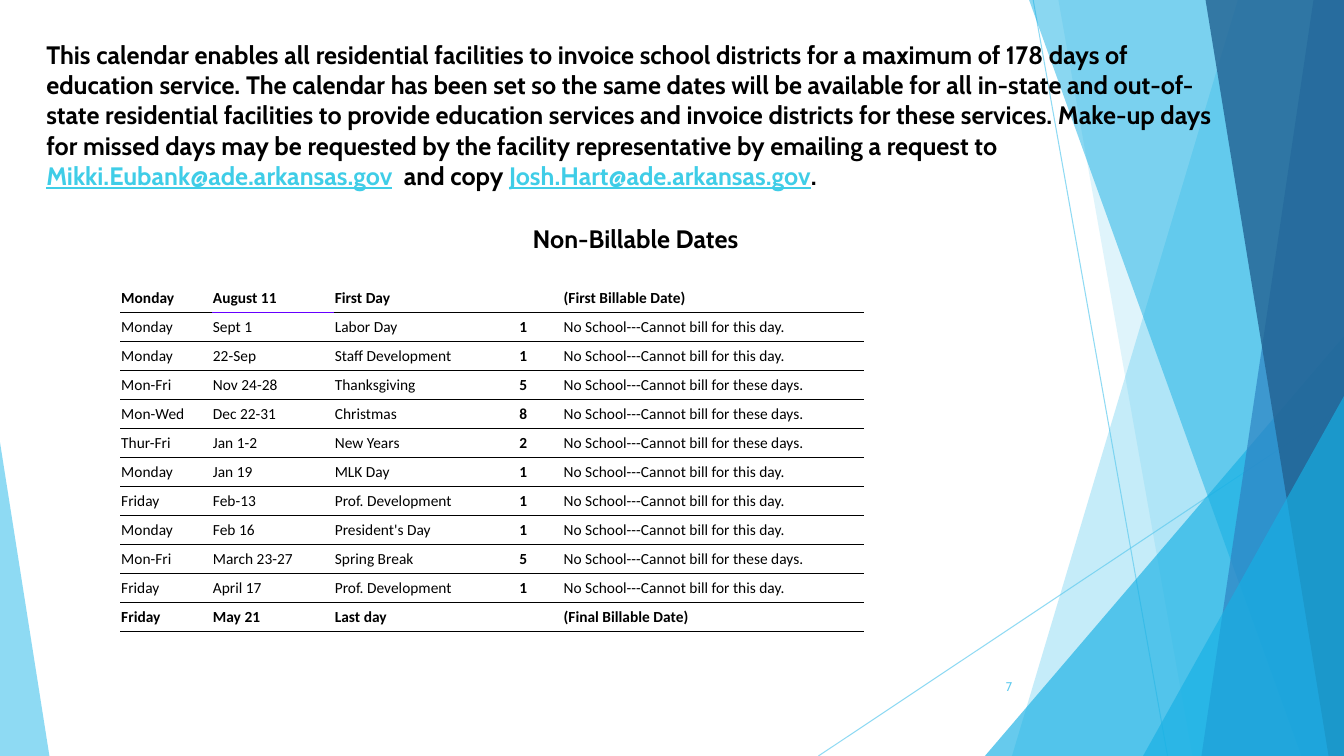
"""Build the slide listing the dates on which facilities cannot bill districts."""
from dataclasses import dataclass

from lxml.etree import SubElement
from pptx import Presentation
from pptx.dml.color import RGBColor
from pptx.dml.fill import FillFormat
from pptx.enum.shapes import MSO_CONNECTOR, MSO_SHAPE
from pptx.enum.text import MSO_ANCHOR, MSO_AUTO_SIZE, PP_ALIGN
from pptx.oxml import parse_xml
from pptx.oxml.ns import nsdecls, qn
from pptx.shapes.autoshape import Shape
from pptx.slide import Slide
from pptx.table import _Cell
from pptx.text.text import TextFrame, _Paragraph
from pptx.util import Pt

WIDTH, HEIGHT = 960, 540
BLACK, WHITE, SKY, CYAN = "000000", "FFFFFF", "5FCBEF", "17B0E4"
LINK, PURPLE = "3FCDE7", "6600FF"
NO_STYLE = "{2D5ABB26-0587-4C30-8999-92F81FD0307C}"


@dataclass(frozen=True)
class Ray:
    start: tuple[float, float]
    end: tuple[float, float]


@dataclass(frozen=True)
class Band:
    top_x: float
    bottom_x: float
    color: str
    opacity: int


@dataclass(frozen=True)
class Wedge:
    left: float
    top: float
    width: float
    peak: float
    color: str
    opacity: int


@dataclass(frozen=True)
class Entry:
    day: str
    date: str
    event: str
    count: str
    note: str
    billable: bool = False


RAYS = [Ray((738, 0), (834, HEIGHT)), Ray((WIDTH, 290), (584.6, HEIGHT))]
FACETS = [
    Band(884.2, 722.9, SKY, 36),
    Band(756, 851.8, SKY, 20),
    Wedge(703.5, 240, 256.5, 1, CYAN, 66),
    Band(735.1, 929.5, CYAN, 50),
    Band(938.2, 858.2, "2E83C3", 70),
    Band(861.1, 949, "226292", 80),
    Wedge(816.5, 283, 143.5, 1, CYAN, 66),
    Wedge(0, 316, 35.3, 0, SKY, 70),
]
NOTICE = [
    ("This calendar enables all residential facilities to invoice school districts for a "
     "maximum of 178 days of education service. The calendar has been set so the same dates "
     "will be available for all in-state and out-of-state residential facilities to provide "
     "education services and invoice districts for these services. Make-up days for missed "
     "days may be requested by the facility representative by emailing a request to ", False),
    ("Mikki.Eubank@ade.arkansas.gov", True),
    ("  and copy ", False),
    ("Josh.Hart@ade.arkansas.gov", True),
    (".", False),
]
ONE_DAY = "No School---Cannot bill for this day."
MORE_DAYS = "No School---Cannot bill for these days."
ENTRIES = [
    Entry("Monday", "August 11", "First Day", "", "(First Billable Date)", True),
    Entry("Monday", "Sept 1", "Labor Day", "1", ONE_DAY),
    Entry("Monday", "22-Sep", "Staff Development", "1", ONE_DAY),
    Entry("Mon-Fri", "Nov 24-28", "Thanksgiving", "5", MORE_DAYS),
    Entry("Mon-Wed", "Dec 22-31", "Christmas", "8", MORE_DAYS),
    Entry("Thur-Fri", "Jan 1-2", "New Years", "2", MORE_DAYS),
    Entry("Monday", "Jan 19", "MLK Day", "1", ONE_DAY),
    Entry("Friday", "Feb-13", "Prof. Development", "1", ONE_DAY),
    Entry("Monday", "Feb 16", "President's Day", "1", ONE_DAY),
    Entry("Mon-Fri", "March 23-27", "Spring Break", "5", MORE_DAYS),
    Entry("Friday", "April 17", "Prof. Development", "1", ONE_DAY),
    Entry("Friday", "May 21", "Last day", "", "(Final Billable Date)", True),
]
COLUMN_WIDTHS = [65.5, 87.1, 107.3, 56.2, 215.3, 113]
COUNT_COLUMN = 3
ROW_HEIGHT = 20.7


def paint(fill: FillFormat, color: str, opacity: int = 100) -> None:
    fill.solid()
    fill.fore_color.rgb = RGBColor.from_string(color)
    if opacity < 100:
        tint = fill._xPr.find(".//" + qn("a:srgbClr"))
        SubElement(tint, qn("a:alpha"), val=str(opacity * 1000))


def style(para: _Paragraph, size: float, color: str = BLACK, bold: bool = False,
          name: str = "Cabin", align: PP_ALIGN = PP_ALIGN.LEFT) -> None:
    para.alignment = align
    para.font.size, para.font.bold, para.font.name = Pt(size), bold, name
    paint(para.font.fill, color)


def place(box: Shape, left: float, top: float, width: float, height: float) -> TextFrame:
    box.left, box.top, box.width, box.height = Pt(left), Pt(top), Pt(width), Pt(height)
    frame = box.text_frame
    frame.word_wrap, frame.auto_size = True, MSO_AUTO_SIZE.NONE
    frame.vertical_anchor = MSO_ANCHOR.TOP
    return frame


def add_text_frame(page: Slide, *bounds: float) -> TextFrame:
    return place(page.shapes.add_textbox(0, 0, 0, 0), *bounds)


def draw_ray(page: Slide, ray: Ray) -> None:
    ends = [Pt(value) for value in ray.start + ray.end]
    line = page.shapes.add_connector(MSO_CONNECTOR.STRAIGHT, *ends)
    line.line.width = Pt(0.75)
    paint(line.line.fill, SKY, 70)
    SubElement(line._element.spPr, qn("a:effectLst"))


def draw_facet(page: Slide, facet: Band | Wedge) -> None:
    if isinstance(facet, Band):
        builder = page.shapes.build_freeform(Pt(facet.top_x), 0, scale=1.0)
        corners = [(WIDTH, 0), (WIDTH, HEIGHT), (facet.bottom_x, HEIGHT)]
        builder.add_line_segments([(Pt(x), Pt(y)) for x, y in corners], close=True)
        shape = builder.convert_to_shape()
    else:
        shape = page.shapes.add_shape(
            MSO_SHAPE.ISOSCELES_TRIANGLE, Pt(facet.left), Pt(facet.top),
            Pt(facet.width), Pt(HEIGHT - facet.top))
        shape.adjustments[0] = facet.peak
    shape.shadow.inherit = False
    shape.line.fill.background()
    paint(shape.fill, facet.color, facet.opacity)


def add_border(cell: _Cell, side: str, color: str) -> None:
    border = parse_xml(
        f'<a:{side} {nsdecls("a")} w="6350"><a:solidFill><a:srgbClr val="{color}"/>'
        f'</a:solidFill></a:{side}>')
    cell._tc.get_or_add_tcPr().insert(0, border)


def fill_cell(cell: _Cell, text: str, bold: bool, align: PP_ALIGN) -> None:
    cell.margin_left = cell.margin_right = cell.margin_top = Pt(0.72)
    cell.margin_bottom = 0
    cell.vertical_anchor = MSO_ANCHOR.MIDDLE
    cell.text = text
    para = cell.text_frame.paragraphs[0]
    style(para, 11, bold=bold, name="Calibri", align=align)
    if not text:
        para._p.get_or_add_endParaRPr().set("sz", "1100")


def draw_calendar(page: Slide) -> None:
    frame = page.shapes.add_table(
        len(ENTRIES), len(COLUMN_WIDTHS), Pt(85.9), Pt(202.5),
        Pt(sum(COLUMN_WIDTHS)), Pt(ROW_HEIGHT * len(ENTRIES)))
    table = frame.table
    table.first_row = table.horz_banding = False
    table._tbl.tblPr.find(qn("a:tableStyleId")).text = NO_STYLE
    for column, width in zip(table.columns, COLUMN_WIDTHS):
        column.width = Pt(width)
    for row, entry in enumerate(ENTRIES):
        table.rows[row].height = Pt(ROW_HEIGHT)
        texts = [entry.day, entry.date, entry.event, entry.count, entry.note, ""]
        for column, text in enumerate(texts):
            cell = table.cell(row, column)
            counted = column == COUNT_COLUMN
            fill_cell(cell, text, entry.billable or counted,
                      PP_ALIGN.CENTER if counted else PP_ALIGN.LEFT)
            if column == len(texts) - 1:
                continue
            if not entry.billable:
                paint(cell.fill, WHITE)
            add_border(cell, "lnB", PURPLE if (row, column) == (0, 1) else BLACK)
    add_border(table.cell(1, 1), "lnT", PURPLE)


def main() -> None:
    deck = Presentation()
    deck.slide_width, deck.slide_height = Pt(WIDTH), Pt(HEIGHT)
    page = deck.slides.add_slide(deck.slide_layouts[5])
    for ray in RAYS:
        draw_ray(page, ray)
    for facet in FACETS:
        draw_facet(page, facet)

    number = add_text_frame(page, 676, 476, 54, 28.8)
    number.vertical_anchor = MSO_ANCHOR.MIDDLE
    number.text = "7"
    style(number.paragraphs[0], 9, SKY, align=PP_ALIGN.RIGHT)

    notice = add_text_frame(page, 26, 24.5, 849.6, 160).paragraphs[0]
    style(notice, 18, bold=True)
    for text, is_address in NOTICE:
        span = notice.add_run()
        span.text = text
        if is_address:
            span.font.underline = True
            paint(span.font.fill, LINK)

    heading = place(page.shapes.title, 295.2, 156.2, 317.5, 28.8)
    heading.text = "Non-Billable Dates"
    style(heading.paragraphs[0], 18, bold=True, align=PP_ALIGN.CENTER)
    draw_calendar(page)
    deck.save("out.pptx")


if __name__ == "__main__":
    main()
